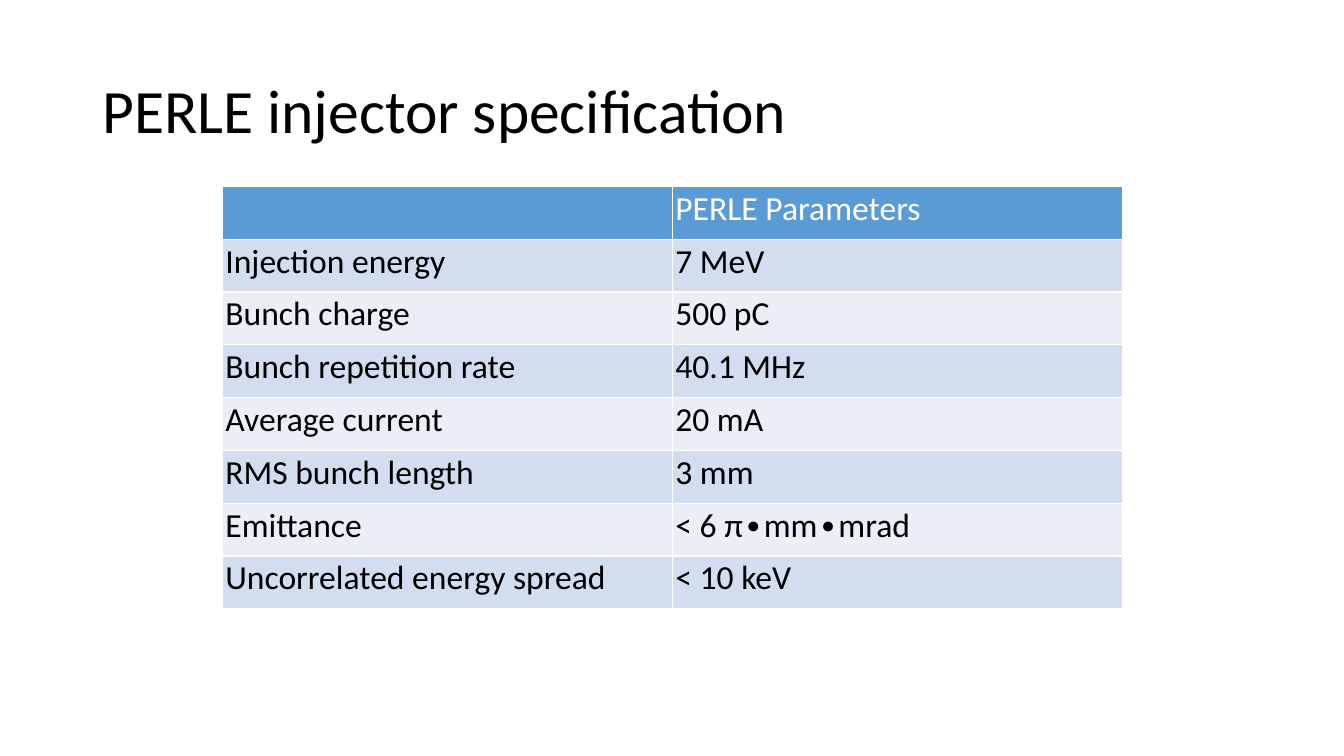
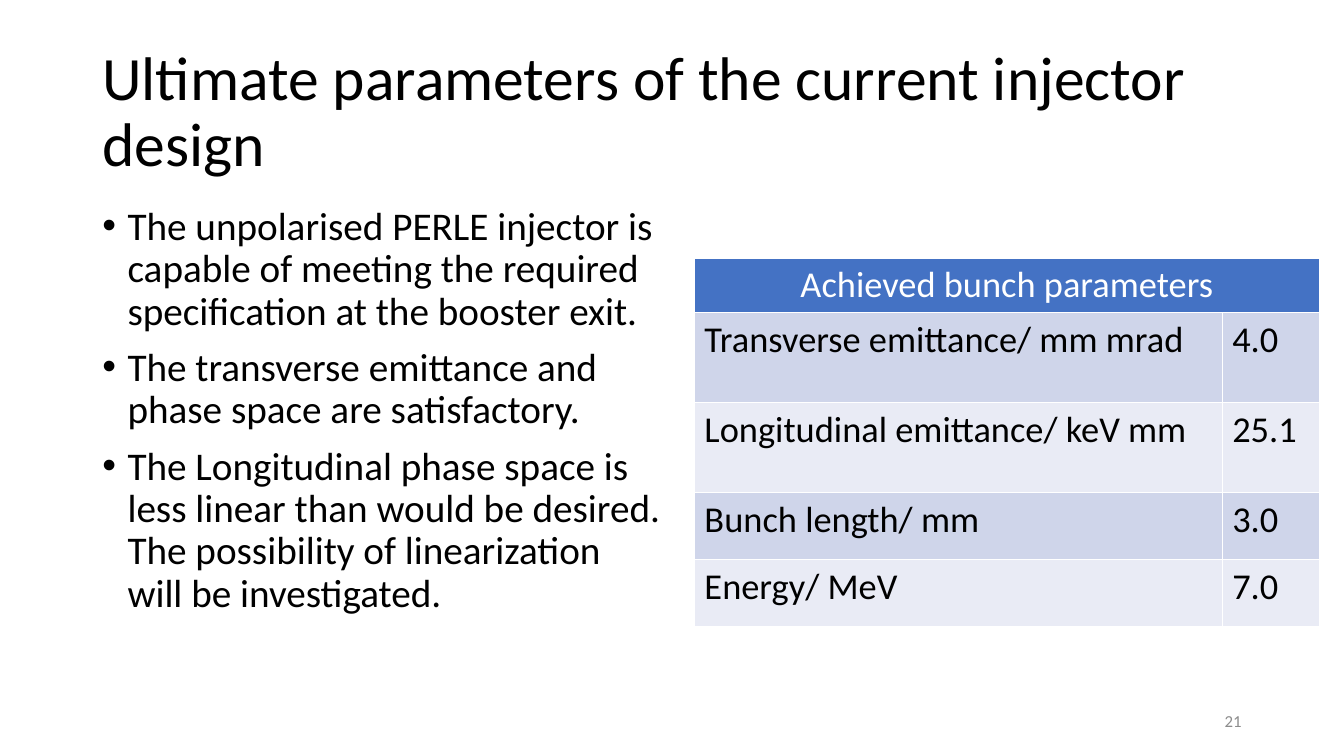
from dataclasses import dataclass
from lxml import etree
from pptx import Presentation
from pptx.dml.color import RGBColor as RGB
from pptx.enum.text import MSO_ANCHOR as Anchor, PP_ALIGN as Align
from pptx.oxml.ns import qn
from pptx.util import Cm, Pt


@dataclass(frozen=True)
class Theme:
    font: str = "Calibri"
    text: RGB = RGB(0, 0, 0)
    light: RGB = RGB(255, 255, 255)
    muted: RGB = RGB.from_string("8C8C8C")
    specification: tuple = ("5B9BD5", "D2DEEF", "EAEFF7")
    achieved: tuple = ("4472C4", "CFD5EA", "E9EBF5")
    title_size: Pt = Pt(44)
    body_size: Pt = Pt(28)
    specification_size: Pt = Pt(24)
    achieved_size: Pt = Pt(26)
    number_size: Pt = Pt(12)


theme = Theme()


def add_text(slide, box, lines, size, color=theme.text, anchor=Anchor.TOP, **paragraph_format):
    frame = slide.shapes.add_textbox(*map(Cm, box)).text_frame
    frame.word_wrap = True
    frame.vertical_anchor = anchor
    frame.text = "\n".join(lines)
    for paragraph in frame.paragraphs:
        for name, value in paragraph_format.items():
            setattr(paragraph, name, value)
        for name, value in {"name": theme.font, "size": size}.items():
            setattr(paragraph.font, name, value)
        paragraph.font.color.rgb = color
    return frame


def add_table(slide, left, top, widths, heights, rows, fills, size, **cell_format):
    box = map(Cm, (left, top, sum(widths), sum(heights)))
    table = slide.shapes.add_table(len(rows), len(widths), *box).table
    for column, width in zip(table.columns, widths):
        column.width = Cm(width)
    for row_index, (height, values) in enumerate(zip(heights, rows)):
        table.rows[row_index].height = Cm(height)
        fill = fills[0] if row_index == 0 else fills[2 - row_index % 2]
        for column_index, value in enumerate(values):
            cell = table.cell(row_index, column_index)
            cell.text = value
            cell.fill.solid()
            cell.fill.fore_color.rgb = RGB.from_string(fill)
            for name, margin in cell_format.items():
                setattr(cell, name, margin)
            font = cell.text_frame.paragraphs[0].font
            for name, setting in {"name": theme.font, "size": size, "bold": False}.items():
                setattr(font, name, setting)
            font.color.rgb = theme.text if row_index else theme.light
    return table


presentation = Presentation()
presentation.slide_width = Cm(33.87)
presentation.slide_height = Cm(19.05)

slides = []
for title in ("PERLE injector specification", "Ultimate parameters of the current injector design"):
    slide = presentation.slides.add_slide(presentation.slide_layouts[6])
    add_text(slide, (2.33, 1.02, 29.21, 3.68), [title], theme.title_size,
             anchor=Anchor.MIDDLE, line_spacing=0.9)
    slides.append(slide)
specification_slide, achieved_slide = slides

specification_rows = [
    ("", "PERLE Parameters"),
    ("Injection energy", "7 MeV"),
    ("Bunch charge", "500 pC"),
    ("Bunch repetition rate", "40.1 MHz"),
    ("Average current", "20 mA"),
    ("RMS bunch length", "3 mm"),
    ("Emittance", "< 6 π∙mm∙mrad"),
    ("Uncorrelated energy spread", "< 10 keV"),
]
add_table(specification_slide, 5.6, 4.7, [11.34] * 2, [1.33] * len(specification_rows),
          specification_rows, theme.specification, theme.specification_size,
          margin_left=Cm(0.08), margin_right=Cm(0.08),
          margin_top=Cm(0.05), margin_bottom=Cm(0.05))

conclusions = [
    "The unpolarised PERLE injector is capable of meeting the required specification at the booster exit.",
    "The transverse emittance and phase space are satisfactory.",
    "The Longitudinal phase space is less linear than would be desired. "
    "The possibility of linearization will be investigated.",
]
body = add_text(achieved_slide, (2.33, 5.08, 14.6, 12.1), conclusions, theme.body_size,
                line_spacing=0.9, space_before=Pt(10))
indent = Pt(18)
for paragraph in body.paragraphs:
    properties = paragraph._p.get_or_add_pPr()
    properties.set("marL", str(indent))
    properties.set("indent", str(-indent))
    bullet_font = etree.Element(qn("a:buFont"), typeface="Arial")
    bullet = etree.Element(qn("a:buChar"), char="•")
    spacing = properties.find(qn("a:spcBef"))
    spacing.addnext(bullet_font)
    bullet_font.addnext(bullet)

achieved_rows = [
    ("Achieved bunch parameters", ""),
    ("Transverse emittance/ mm mrad", "4.0"),
    ("Longitudinal emittance/ keV mm", "25.1"),
    ("Bunch length/ mm", "3.0"),
    ("Energy/ MeV", "7.0"),
]
achieved_table = add_table(achieved_slide, 17.5, 6.5, [13.3, 2.46],
                           [1.38, 2.27, 2.27, 1.68, 1.68], achieved_rows,
                           theme.achieved, theme.achieved_size)
header = achieved_table.cell(0, 0)
header.merge(achieved_table.cell(0, 1))
header.text_frame.paragraphs[0].alignment = Align.CENTER

add_text(achieved_slide, (23.92, 17.65, 7.62, 1.01), ["21"], theme.number_size,
         theme.muted, Anchor.MIDDLE, alignment=Align.RIGHT)

presentation.save("out.pptx")
